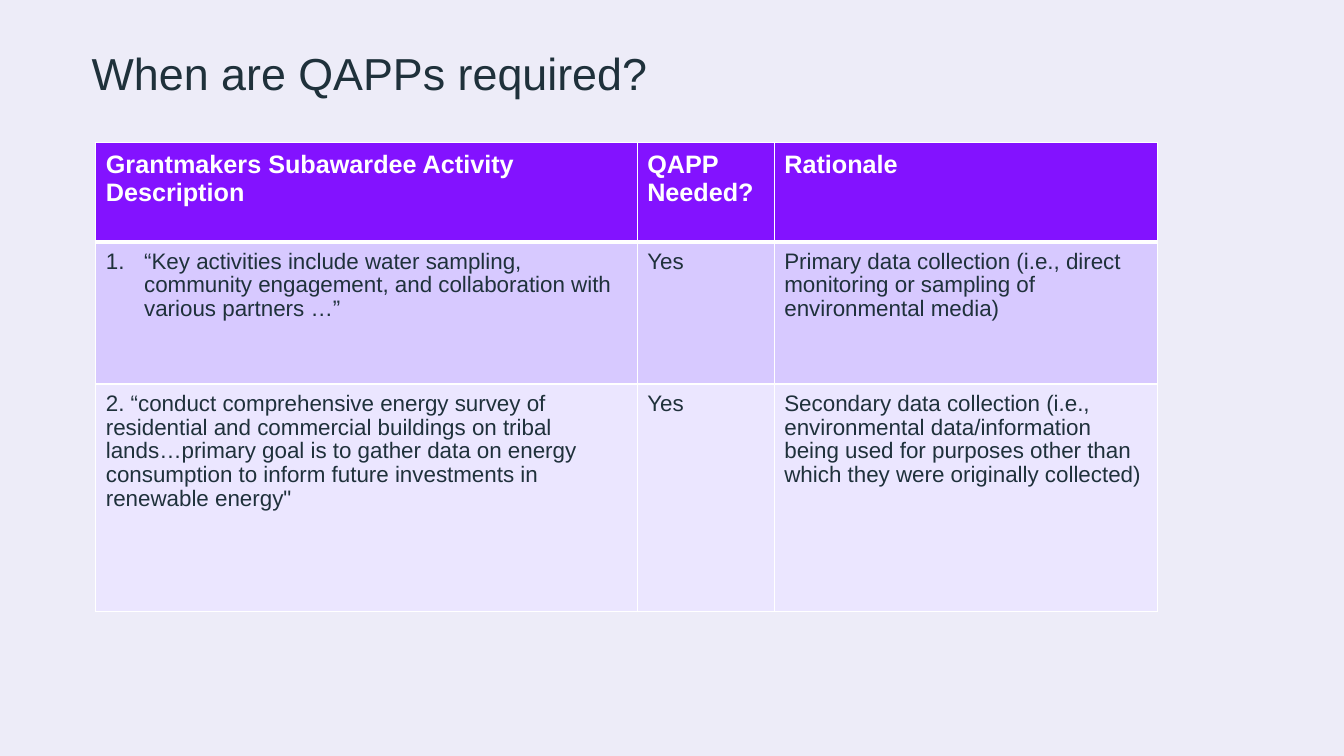
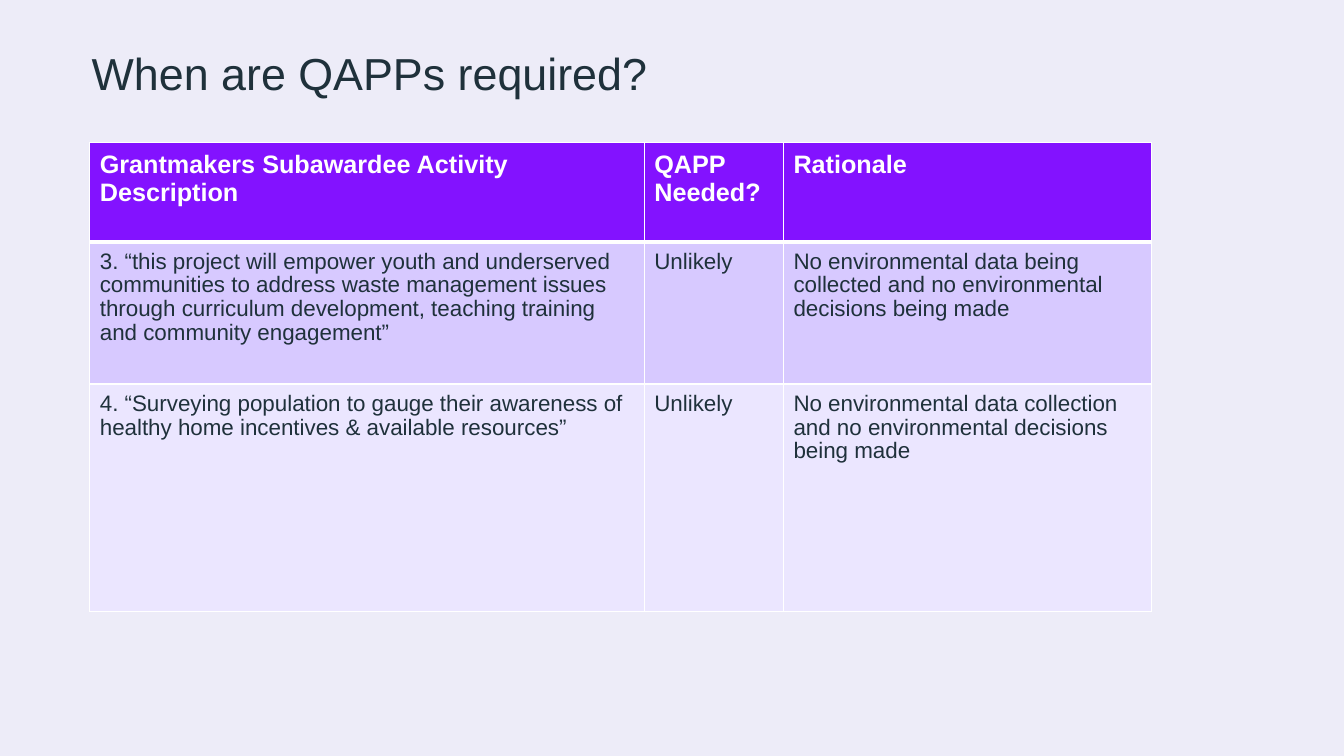
"""Build two slides of tables showing when QAPPs are required."""
import pptx
import pptx.dml.color
import pptx.enum.text
import pptx.oxml.ns
import pptx.util
from lxml import etree

Inches, Pt = pptx.util.Inches, pptx.util.Pt

TITLE = "When are QAPPs required?"
HEADINGS = ("Grantmakers Subawardee Activity Description", "QAPP\nNeeded?", "Rationale")
SLIDES = [
    {
        "left": 0.95,
        "columns": (5.37, 1.36, 3.8),
        "numbered": True,
        "activities": [
            ("“Key activities include water sampling, community engagement, "
             "and collaboration with various partners …”",
             "Yes",
             "Primary data collection (i.e., direct monitoring or sampling of "
             "environmental media)"),
            ("2. “conduct comprehensive energy survey of residential and commercial "
             "buildings on tribal lands…primary goal is to gather data on energy "
             "consumption to inform future investments in renewable energy\"",
             "Yes",
             "Secondary data collection (i.e., environmental data/information being "
             "used for purposes other than which they were originally collected)"),
        ],
    },
    {
        "left": 0.89,
        "columns": (5.5, 1.38, 3.65),
        "numbered": False,
        "activities": [
            ("3. “this project will empower youth and underserved communities to address "
             "waste management issues through curriculum development, teaching training "
             "and community engagement”",
             "Unlikely",
             "No environmental data being collected and no environmental decisions "
             "being made"),
            ("4. “Surveying population to gauge their awareness of healthy home "
             "incentives & available resources”",
             "Unlikely",
             "No environmental data collection and no environmental decisions being made"),
        ],
    },
]

COLORS = {"background": "EDECF8", "ink": "1F313B", "white": "FFFFFF",
          "header": "8312FF", "first": "D7C9FF", "second": "EBE6FF"}
FONTS = {
    "title": {"name": "Arial", "size": Pt(32), "bold": False},
    "header": {"name": "Arial", "size": Pt(18), "bold": True},
    "body": {"name": "Arial", "size": Pt(16), "bold": False},
}
ROWS = [
    {"height": 0.99, "fill": "header", "font": "header", "ink": "white",
     "spacing": 1.0, "top": 1, "bottom": 3},
    {"height": 1.41, "fill": "first", "font": "body", "ink": "ink",
     "spacing": 0.96, "top": 3, "bottom": 1},
    {"height": 2.26, "fill": "second", "font": "body", "ink": "ink",
     "spacing": 0.96, "top": 1, "bottom": 1},
]
TABLE_TOP = 1.41
TITLE_BOX = {"left": Inches(0.9), "top": Inches(0.35),
             "width": Inches(11.54), "height": Inches(0.76)}
TITLE_FRAME = {"margin_left": Inches(0.01), "margin_right": 0,
               "margin_top": Inches(0.1), "margin_bottom": 0, "word_wrap": True,
               "vertical_anchor": pptx.enum.text.MSO_ANCHOR.TOP}
CELL_FRAME = {"margin_left": Inches(0.1), "margin_right": Inches(0.1),
              "margin_top": Inches(0.08), "margin_bottom": 0,
              "vertical_anchor": pptx.enum.text.MSO_ANCHOR.TOP}


def rgb(key):
    """Return a palette colour."""
    return pptx.dml.color.RGBColor.from_string(COLORS[key])


def apply(target, values):
    """Set each named attribute on the target."""
    for name, value in values.items():
        setattr(target, name, value)


def style(paragraph, font, ink):
    """Left-align a paragraph and format its font."""
    paragraph.alignment = pptx.enum.text.PP_ALIGN.LEFT
    apply(paragraph.font, FONTS[font])
    paragraph.font.color.rgb = rgb(ink)


def add_borders(cell, top, bottom):
    """Draw white borders around a cell."""
    qn = pptx.oxml.ns.qn
    properties = cell._tc.get_or_add_tcPr()
    widths = {"a:lnL": 1, "a:lnR": 1, "a:lnT": top, "a:lnB": bottom}
    for position, (tag, width) in enumerate(widths.items()):
        line = etree.Element(qn(tag), w=str(Pt(width)))
        fill = etree.SubElement(line, qn("a:solidFill"))
        etree.SubElement(fill, qn("a:srgbClr"), val=COLORS["white"])
        properties.insert(position, line)


def add_number(paragraph):
    """Number a paragraph with a hanging indent."""
    properties = paragraph._p.get_or_add_pPr()
    properties.set("marL", str(Inches(0.38)))
    properties.set("indent", str(-Inches(0.38)))
    etree.SubElement(properties, pptx.oxml.ns.qn("a:buAutoNum"), type="arabicPeriod")


def fill_cell(cell, text, row, numbered):
    """Write and format one table cell."""
    cell.text = text
    apply(cell, CELL_FRAME)
    cell.fill.solid()
    cell.fill.fore_color.rgb = rgb(row["fill"])
    add_borders(cell, row["top"], row["bottom"])
    for paragraph in cell.text_frame.paragraphs:
        paragraph.line_spacing = row["spacing"]
        if numbered:
            add_number(paragraph)
        style(paragraph, row["font"], row["ink"])


def add_activities(slide, content):
    """Add the table of activities."""
    columns = content["columns"]
    table = slide.shapes.add_table(
        len(ROWS), len(columns), Inches(content["left"]), Inches(TABLE_TOP),
        Inches(sum(columns)), Inches(sum(row["height"] for row in ROWS))).table
    for column, width in zip(table.columns, columns):
        column.width = Inches(width)
    for r, (row, texts) in enumerate(zip(ROWS, [HEADINGS, *content["activities"]])):
        table.rows[r].height = Inches(row["height"])
        for c, text in enumerate(texts):
            numbered = content["numbered"] and (r, c) == (1, 0)
            fill_cell(table.cell(r, c), text, row, numbered)


def main():
    """Build and save the presentation."""
    deck = pptx.Presentation()
    apply(deck, {"slide_width": Inches(13.33), "slide_height": Inches(7.5)})
    backdrop = deck.slide_master.background.fill
    backdrop.solid()
    backdrop.fore_color.rgb = rgb("background")
    for content in SLIDES:
        slide = deck.slides.add_slide(deck.slide_layouts.get_by_name("Title Only"))
        heading = slide.shapes.title
        heading.text = TITLE
        apply(heading, TITLE_BOX)
        apply(heading.text_frame, TITLE_FRAME)
        style(heading.text_frame.paragraphs[0], "title", "ink")
        add_activities(slide, content)
    deck.save("out.pptx")


if __name__ == "__main__":
    main()
